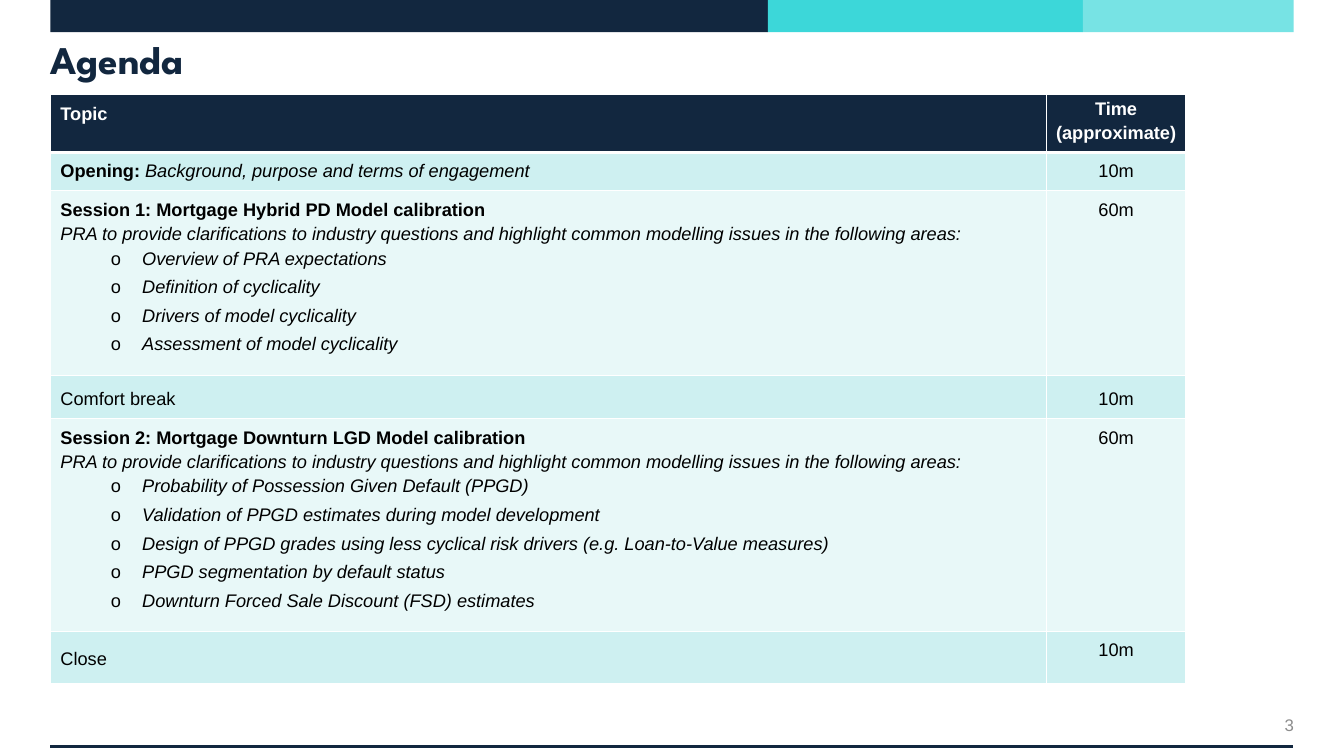
from dataclasses import dataclass
from lxml.etree import SubElement
from pptx import Presentation
from pptx.dml.color import RGBColor
from pptx.enum.shapes import MSO_CONNECTOR, MSO_SHAPE
from pptx.enum.text import MSO_ANCHOR, PP_ALIGN
from pptx.oxml.ns import qn
from pptx.util import Cm, Pt


@dataclass(frozen=True)
class Theme:
    navy: str = "12273F"
    teal: str = "3CD7D9"
    aqua: str = "77E3E4"
    dark: str = "CEF0F1"
    light: str = "E8F8F8"
    white: str = "FFFFFF"
    black: str = "000000"
    grey: str = "8C8C8C"
    head: str = "League Spartan"
    body: str = "Arial"
    big: int = 28
    text: int = 13
    small: int = 12


class Deck:
    def __init__(self, theme):
        self.theme = theme
        self.file = Presentation()
        self.file.slide_width = Cm(33.87)
        self.file.slide_height = Cm(19.05)
        self.slide = self.file.slides.add_slide(self.file.slide_layouts[5])

    def run(self, para, text, size, color, font=None, bold=False, slant=False):
        run = para.add_run()
        run.text = text
        run.font.name = font or self.theme.body
        run.font.size = Pt(size)
        run.font.bold = bold
        run.font.italic = slant
        run.font.color.rgb = RGBColor.from_string(color)

    def bar(self, left, width, color):
        bar = self.slide.shapes.add_shape(
            MSO_SHAPE.RECTANGLE, Cm(left), Cm(0), Cm(width), Cm(0.81))
        bar.shadow.inherit = False
        bar.fill.solid()
        bar.fill.fore_color.rgb = RGBColor.from_string(color)
        bar.line.fill.background()

    def rule(self, left, right, top):
        line = self.slide.shapes.add_connector(
            MSO_CONNECTOR.STRAIGHT, Cm(left), Cm(top), Cm(right), Cm(top))
        line.line.width = Pt(2.25)
        line.line.color.rgb = RGBColor.from_string(self.theme.navy)
        SubElement(line._element.spPr, qn("a:effectLst"))

    def title(self, text):
        title = self.slide.shapes.title
        title.left, title.top = Cm(1.27), Cm(1.07)
        title.width, title.height = Cm(31.32), Cm(0.84)
        frame = title.text_frame
        frame.margin_left = frame.margin_right = 0
        frame.margin_top = frame.margin_bottom = 0
        frame.vertical_anchor = MSO_ANCHOR.MIDDLE
        para = frame.paragraphs[0]
        para.alignment = PP_ALIGN.LEFT
        self.run(para, text, self.theme.big, self.theme.navy, self.theme.head, True)

    def number(self, text):
        box = self.slide.shapes.add_textbox(Cm(29.64), Cm(17.73), Cm(2.97), Cm(1.07))
        frame = box.text_frame
        frame.word_wrap = True
        frame.margin_right = 0
        frame.vertical_anchor = MSO_ANCHOR.MIDDLE
        para = frame.paragraphs[0]
        para.alignment = PP_ALIGN.RIGHT
        self.run(para, text, self.theme.small, self.theme.grey)

    def table(self, cols, rows):
        shape = self.slide.shapes.add_table(
            len(rows), len(cols), Cm(1.27), Cm(2.39),
            Cm(sum(cols)), Cm(sum(row[0] for row in rows)))
        table = shape.table
        table.horz_banding = False
        for col, width in zip(table.columns, cols):
            col.width = Cm(width)
        for i, (high, topic, time, mid) in enumerate(rows):
            table.rows[i].height = Cm(high)
            for j, paras in enumerate((topic, [[(time, "b" if i == 0 else "")]])):
                cell = table.cell(i, j)
                self.edge(cell, i)
                self.cell(cell, paras, i, j)
                if j in mid:
                    cell.vertical_anchor = MSO_ANCHOR.MIDDLE
        head = table.cell(0, 1)
        head.margin_left = head.margin_right = 0
        head.margin_top = head.margin_bottom = 0

    def edge(self, cell, row):
        props = cell._tc.get_or_add_tcPr()
        for side in "LRTB":
            thick = (row, side) in ((0, "B"), (1, "T"))
            line = SubElement(props, qn(f"a:ln{side}"), w=str(Pt(3 if thick else 1)))
            fill = SubElement(line, qn("a:solidFill"))
            SubElement(fill, qn("a:srgbClr"), val=self.theme.white)

    def cell(self, cell, paras, row, col):
        theme = self.theme
        cell.fill.solid()
        fill = theme.navy if row == 0 else theme.dark if row % 2 else theme.light
        cell.fill.fore_color.rgb = RGBColor.from_string(fill)
        color = theme.black if row else theme.white
        frame = cell.text_frame
        for k, runs in enumerate(paras):
            para = frame.add_paragraph() if k else frame.paragraphs[0]
            para.line_spacing = 1.2
            if col == 1:
                para.alignment = PP_ALIGN.CENTER
            if k > 1:
                self.bullet(para)
            for text, look in runs:
                self.run(para, text, theme.text, color, bold="b" in look, slant="i" in look)

    def bullet(self, para):
        para.level = 1
        para.space_after = Pt(3)
        props = para._p.get_or_add_pPr()
        props.set("marL", str(Cm(2.06)))
        props.set("indent", str(Cm(-0.79)))
        SubElement(props, qn("a:buFont"), typeface=self.theme.body)
        SubElement(props, qn("a:buChar"), char="o")


def session(name, *items):
    intro = ("PRA to provide clarifications to industry questions and highlight "
             "common modelling issues in the following areas:")
    return [[(name, "b")]] + [[(text, "i")] for text in (intro, *items)]


def main():
    theme = Theme()
    deck = Deck(theme)
    for left, width, color in ((1.27, 18.08, theme.navy), (19.35, 7.94, theme.teal),
                               (27.29, 5.31, theme.aqua)):
        deck.bar(left, width, color)
    deck.rule(1.27, 32.59, 18.8)
    deck.title("Agenda")
    first = session(
        "Session 1: Mortgage Hybrid PD Model calibration",
        "Overview of PRA expectations",
        "Definition of cyclicality",
        "Drivers of model cyclicality",
        "Assessment of model cyclicality")
    second = session(
        "Session 2: Mortgage Downturn LGD Model calibration",
        "Probability of Possession Given Default (PPGD)",
        "Validation of PPGD estimates during model development",
        "Design of PPGD grades using less cyclical risk drivers (e.g. Loan-to-Value measures)",
        "PPGD segmentation by default status",
        "Downturn Forced Sale Discount (FSD) estimates")
    opening = [("Opening: ", "b"), ("Background, purpose and terms of engagement", "i")]
    deck.table((25.1, 3.51), (
        (1.45, [[("Topic", "b")]], "Time (approximate)", ()),
        (0.97, [opening], "10m", ()),
        (4.65, first, "60m", ()),
        (1.09, [[("Comfort break", "")]], "10m", (0, 1)),
        (5.36, second, "60m", ()),
        (1.32, [[("Close", "")]], "10m", (0,))))
    deck.number("3")
    deck.file.save("out.pptx")


if __name__ == "__main__":
    main()
